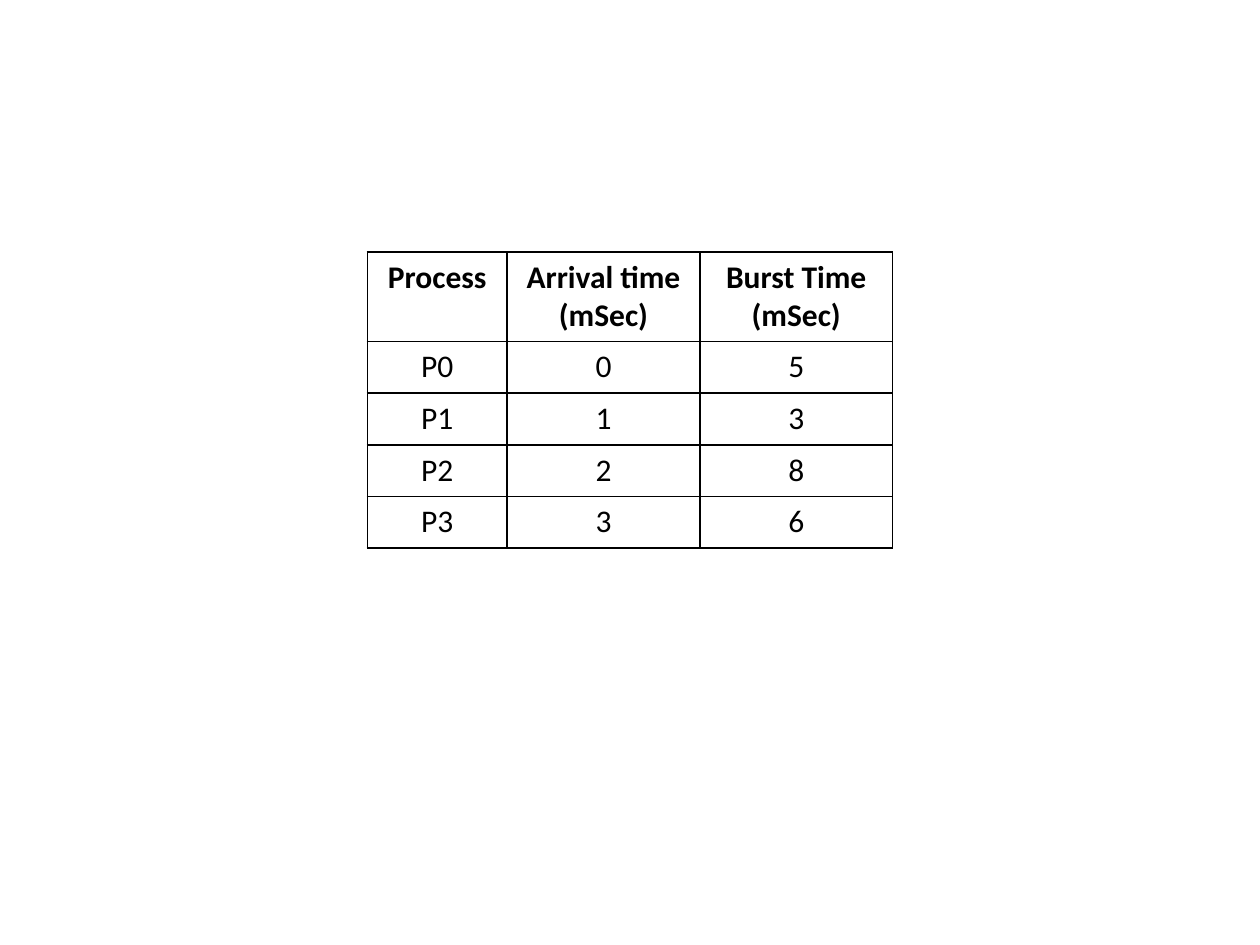
from dataclasses import dataclass

from lxml.etree import SubElement
from pptx import Presentation
from pptx.dml.color import RGBColor
from pptx.enum.text import PP_ALIGN
from pptx.oxml.ns import qn
from pptx.util import Inches, Pt


@dataclass(frozen=True)
class Theme:
    font: str = "Calibri"
    size: int = 18
    ink: str = "000000"
    border: float = 1


THEME = Theme()
WIDTH, HEIGHT = 10, 7.5
COLUMNS = (1.11, 1.53, 1.53)
HEADER_HEIGHT, ROW_HEIGHT = 0.71, 0.41
TOP = 2
SCHEDULE = (
    ("Process", "Arrival time (mSec)", "Burst Time (mSec)"),
    ("P0", "0", "5"),
    ("P1", "1", "3"),
    ("P2", "2", "8"),
    ("P3", "3", "6"),
)


def write(tf, text, bold=False, align=PP_ALIGN.CENTER):
    p = tf.paragraphs[0]
    p.alignment = align
    r = p.add_run()
    r.text = text
    r.font.name = THEME.font
    r.font.size = Pt(THEME.size)
    r.font.bold = bold
    r.font.color.rgb = RGBColor.from_string(THEME.ink)


def add_borders(cell):
    """Outline all four sides; call before the fill, which must follow the lines."""
    props = cell._tc.get_or_add_tcPr()
    for side in ("lnL", "lnR", "lnT", "lnB"):
        line = SubElement(props, qn(f"a:{side}"), w=str(Pt(THEME.border)))
        fill = SubElement(line, qn("a:solidFill"))
        SubElement(fill, qn("a:srgbClr"), val=THEME.ink)


def add_grid(s, rows, columns, top):
    """Add a bordered table, centred across the slide."""
    width = sum(columns)
    heights = [HEADER_HEIGHT] + [ROW_HEIGHT] * (len(rows) - 1)
    table = s.shapes.add_table(
        len(rows), len(columns), Inches((WIDTH - width) / 2), Inches(top),
        Inches(width), Inches(sum(heights))).table
    table.horz_banding = False
    for column, w in zip(table.columns, columns):
        column.width = Inches(w)
    for i, (row, height, texts) in enumerate(zip(table.rows, heights, rows)):
        row.height = Inches(height)
        for cell, text in zip(row.cells, texts):
            add_borders(cell)
            cell.fill.background()
            write(cell.text_frame, text, bold=i == 0)


def main():
    prs = Presentation()
    prs.slide_width, prs.slide_height = Inches(WIDTH), Inches(HEIGHT)
    s = prs.slides.add_slide(prs.slide_layouts[6])
    add_grid(s, SCHEDULE, COLUMNS, TOP)
    prs.save("out.pptx")


if __name__ == "__main__":
    main()
